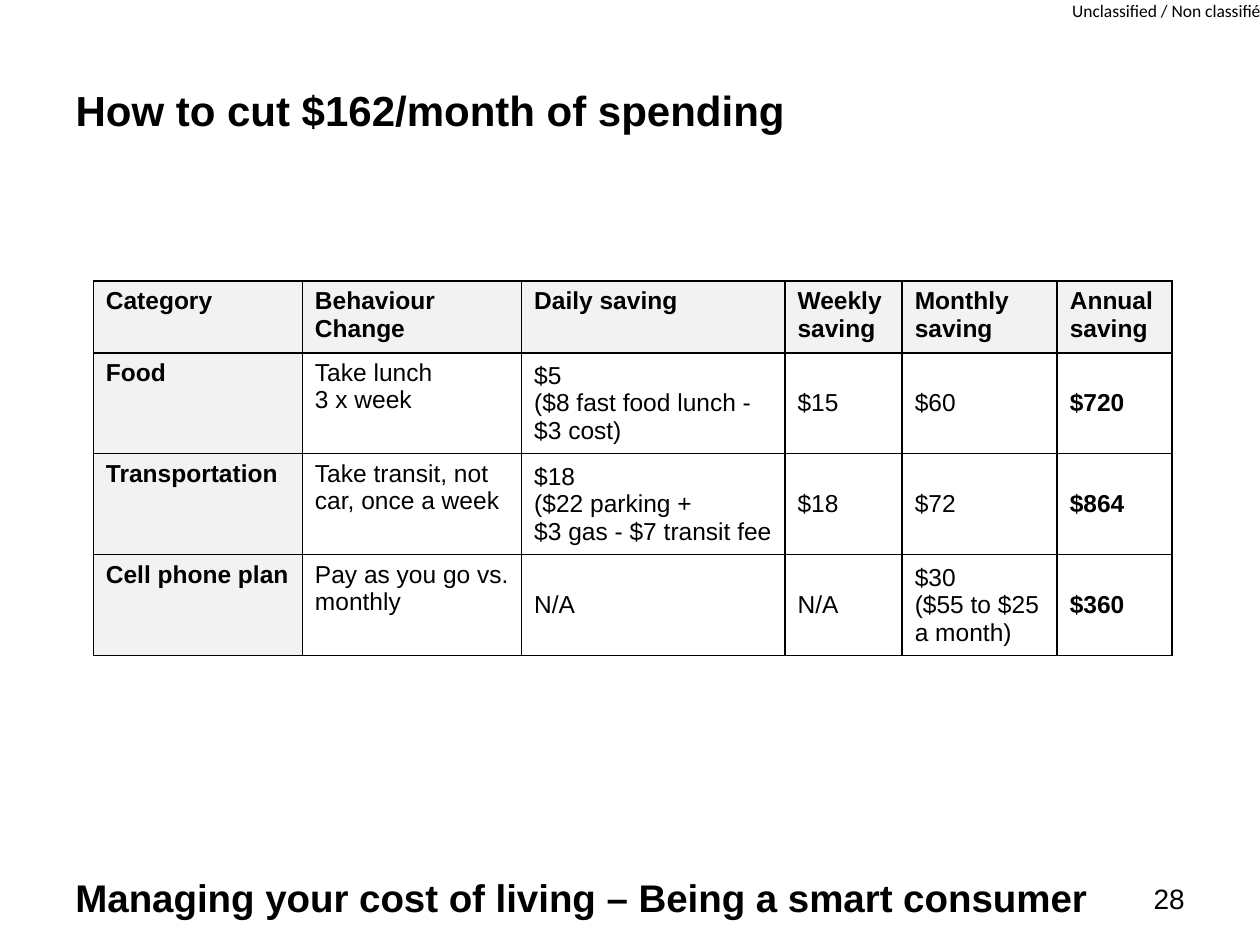
import pptx
import pptx.dml.color
import pptx.enum.text
import pptx.oxml
import pptx.oxml.ns
import pptx.util

Pt = pptx.util.Pt
ALIGN = pptx.enum.text.PP_ALIGN
ANCHOR = pptx.enum.text.MSO_ANCHOR
COLORS = {"text": "000000", "line": "000000", "header": "F2F2F2", "cell": "FFFFFF"}

COLUMN_WIDTHS = [119.5, 125.3, 150.5, 67, 88.6, 65.5]
ROW_HEIGHTS = [41.04, 57.6, 57.6, 57.6]
SAVINGS = [
    ["Category", "Behaviour Change", "Daily saving",
     "Weekly saving", "Monthly saving", "Annual saving"],
    ["Food", "Take lunch\n3 x week", "$5\n($8 fast food lunch - $3 cost)",
     "$15", "$60", "$720"],
    ["Transportation", "Take transit, not car, once a week",
     "$18\n($22 parking +\n$3 gas - $7 transit fee", "$18", "$72", "$864"],
    ["Cell phone plan", "Pay as you go vs. monthly", "N/A",
     "N/A", "$30\n($55 to $25\na month)", "$360"],
]


class Deck:
    """Holds the style and the current slide."""

    def __init__(self, width, height, font="Arial"):
        self.prs = pptx.Presentation()
        self.prs.slide_width, self.prs.slide_height = Pt(width), Pt(height)
        self.font = font
        self.slide = self.prs.slides.add_slide(self.prs.slide_layouts[5])

    def color(self, key):
        return pptx.dml.color.RGBColor.from_string(COLORS[key])

    def set_text(self, frame, text, size, bold=False, align=ALIGN.LEFT, font=None):
        frame.text = text
        for paragraph in frame.paragraphs:
            paragraph.alignment = align
            paragraph.font.name = font or self.font
            paragraph.font.size = Pt(size)
            paragraph.font.bold = bold
            paragraph.font.color.rgb = self.color("text")

    def title(self, text, box, size):
        title = self.slide.shapes.title
        title.left, title.top, title.width, title.height = map(Pt, box)
        title.text_frame.vertical_anchor = ANCHOR.MIDDLE
        self.set_text(title.text_frame, text, size, bold=True)

    def text(self, text, box, size, wrap=True, inset=None, **style):
        frame = self.slide.shapes.add_textbox(*map(Pt, box)).text_frame
        frame.word_wrap = wrap
        if inset is not None:
            frame.margin_left = frame.margin_right = Pt(inset)
            frame.margin_top = frame.margin_bottom = Pt(inset)
        self.set_text(frame, text, size, **style)

    def borders(self, cell):
        properties = cell._tc.get_or_add_tcPr()
        for side in "LRTB":
            properties.append(pptx.oxml.parse_xml(
                f'<a:ln{side} {pptx.oxml.ns.nsdecls("a")} w="{Pt(1)}"><a:solidFill>'
                f'<a:srgbClr val="{COLORS["line"]}"/></a:solidFill></a:ln{side}>'))

    def table(self, rows, left, top, widths, heights, size):
        table = self.slide.shapes.add_table(
            len(rows), len(widths), Pt(left), Pt(top),
            Pt(sum(widths)), Pt(sum(heights))).table
        for column, width in zip(table.columns, widths):
            column.width = Pt(width)
        for row, height in zip(table.rows, heights):
            row.height = Pt(height)
        for r, row in enumerate(rows):
            for c, text in enumerate(row):
                cell = table.cell(r, c)
                is_header = r == 0 or c == 0
                is_amount = r > 0 and c > 1
                self.borders(cell)
                cell.fill.solid()
                cell.fill.fore_color.rgb = self.color("header" if is_header else "cell")
                cell.vertical_anchor = ANCHOR.MIDDLE if is_amount else ANCHOR.TOP
                self.set_text(cell.text_frame, text, size,
                              bold=is_header or c == len(widths) - 1)


def main():
    deck = Deck(720, 540)

    # Classification mark and title
    deck.text("Unclassified / Non classifié", (612.7, 0, 109.4, 12.2), 10,
              wrap=False, inset=0, font="Calibri")
    deck.title("How to cut $162/month of spending", (36, 44.64, 600, 36), 24)

    # Savings by category
    deck.table(SAVINGS, 53.3, 160.6, COLUMN_WIDTHS, ROW_HEIGHTS, 14)

    # Section name and page number
    deck.text("Managing your cost of living – Being a smart consumer",
              (36, 496, 600, 28), 22, bold=True)
    deck.text("28", (645, 500.4, 39, 24), 16, align=ALIGN.RIGHT)

    deck.prs.save("out.pptx")


if __name__ == "__main__":
    main()
